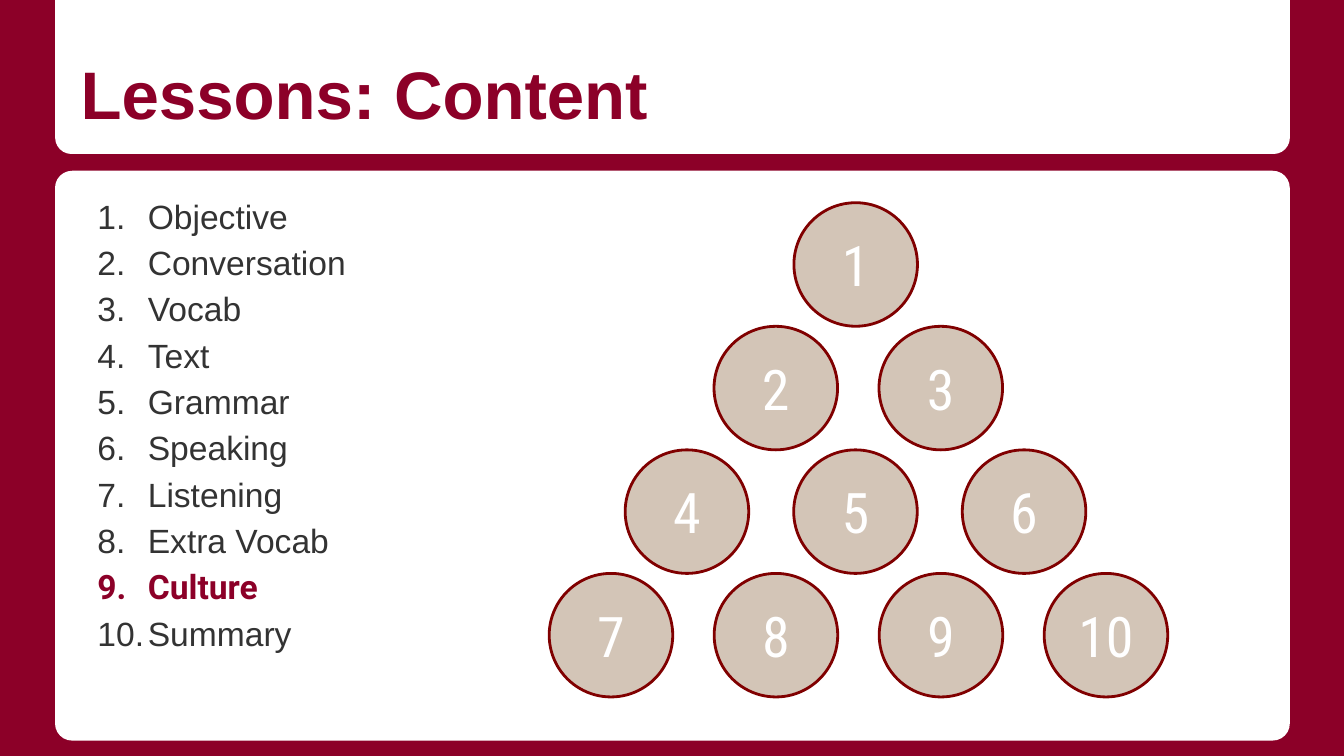
"""Build the "Lessons: Content" slide with a numbered list and a pyramid of circles."""
from dataclasses import dataclass
from itertools import count

from lxml.etree import SubElement
from pptx import Presentation
from pptx.dml.color import RGBColor
from pptx.enum.shapes import MSO_SHAPE
from pptx.enum.text import MSO_ANCHOR, MSO_AUTO_SIZE, PP_ALIGN
from pptx.oxml.ns import qn
from pptx.shapes.autoshape import Shape
from pptx.slide import Slide
from pptx.text.text import TextFrame, _Paragraph
from pptx.util import Pt

CRIMSON = RGBColor(0x8C, 0x00, 0x28)
MAROON = RGBColor(0x80, 0x00, 0x00)
SAND = RGBColor(0xD3, 0xC5, 0xB7)
CHARCOAL = RGBColor(0x33, 0x33, 0x33)
WHITE = RGBColor(0xFF, 0xFF, 0xFF)
INSET = 7.2
DIAMETER = 66.2
PYRAMID_TOP = 108.6


@dataclass(frozen=True)
class Panel:
    kind: MSO_SHAPE
    top: float
    height: float
    radius: float
    rotation: float = 0


@dataclass(frozen=True)
class Row:
    left: float
    pitch: float
    circles: int


@dataclass(frozen=True)
class Item:
    text: str
    font: str = "Arial"
    color: RGBColor = CHARCOAL
    bold: bool = False


PANELS = [
    Panel(MSO_SHAPE.ROUNDED_RECTANGLE, 91.5, 305.3, 0.03),
    Panel(MSO_SHAPE.ROUND_2_SAME_RECTANGLE, 0, 82.5, 0.106, 180),
]
ROWS = [Row(425.3, 0, 1), Row(382.5, 88.4, 2), Row(334.9, 90.3, 3), Row(294.2, 88.4, 4)]
ITEMS = [
    Item("Objective"),
    Item("Conversation"),
    Item("Vocab"),
    Item("Text"),
    Item("Grammar"),
    Item("Speaking"),
    Item("Listening"),
    Item("Extra Vocab"),
    Item("Culture", "Roboto", CRIMSON, True),
    Item("Summary"),
]


def place(sp: Shape, left: float, top: float, width: float, height: float) -> None:
    sp.left, sp.top, sp.width, sp.height = Pt(left), Pt(top), Pt(width), Pt(height)


def set_frame(tf: TextFrame, anchor: MSO_ANCHOR) -> None:
    tf.word_wrap = True
    tf.auto_size = MSO_AUTO_SIZE.NONE
    tf.vertical_anchor = anchor
    tf.margin_left = tf.margin_right = tf.margin_top = tf.margin_bottom = Pt(INSET)


def add_run(p: _Paragraph, text: str, font: str, size: float, color: RGBColor, bold: bool = False) -> None:
    r = p.add_run()
    r.text = text
    r.font.name, r.font.size, r.font.bold = font, Pt(size), bold
    r.font.color.rgb = color


def add_panel(s: Slide, panel: Panel) -> None:
    sp = s.shapes.add_shape(panel.kind, Pt(29.5), Pt(panel.top), Pt(661.5), Pt(panel.height))
    sp.adjustments[0] = panel.radius
    sp.rotation = panel.rotation
    sp.shadow.inherit = False
    sp.fill.solid()
    sp.fill.fore_color.rgb = WHITE
    sp.line.fill.background()
    sp.element.getparent().insert(2, sp.element)


def add_title(s: Slide, text: str) -> None:
    sp = s.shapes.title
    place(sp, 36, 10.8, 648, 67.7)
    set_frame(sp.text_frame, MSO_ANCHOR.BOTTOM)
    p = sp.text_frame.paragraphs[0]
    p.alignment = PP_ALIGN.LEFT
    add_run(p, text, "Arial", 36, CRIMSON, True)


def add_item(p: _Paragraph, item: Item) -> None:
    p.line_spacing = 1.15
    p.space_before = Pt(0)
    pPr = p._p.get_or_add_pPr()
    pPr.set("marL", str(Pt(36)))
    pPr.set("indent", str(-Pt(27)))
    SubElement(SubElement(pPr, qn("a:buClr")), qn("a:srgbClr"), val=str(item.color))
    SubElement(pPr, qn("a:buFont"), typeface=item.font)
    SubElement(pPr, qn("a:buAutoNum"), type="arabicPeriod")
    add_run(p, item.text, item.font, 18, item.color, item.bold)


def add_list(s: Slide, items: list[Item]) -> None:
    sp = s.placeholders[1]
    place(sp, 36, 94.3, 648, 293)
    tf = sp.text_frame
    set_frame(tf, MSO_ANCHOR.TOP)
    for i, item in enumerate(items):
        add_item(tf.add_paragraph() if i else tf.paragraphs[0], item)


def add_circle(s: Slide, left: float, top: float, label: str) -> None:
    sp = s.shapes.add_shape(MSO_SHAPE.OVAL, Pt(left), Pt(top), Pt(DIAMETER), Pt(DIAMETER))
    sp.shadow.inherit = False
    sp.fill.solid()
    sp.fill.fore_color.rgb = SAND
    sp.line.color.rgb = MAROON
    sp.line.width = Pt(1.5)
    set_frame(sp.text_frame, MSO_ANCHOR.MIDDLE)
    p = sp.text_frame.paragraphs[0]
    p.alignment = PP_ALIGN.CENTER
    add_run(p, label, "Roboto Condensed", 30, WHITE)


def main() -> None:
    prs = Presentation()
    prs.slide_width, prs.slide_height = Pt(720), Pt(405)
    s = prs.slides.add_slide(prs.slide_layouts[1])
    s.background.fill.solid()
    s.background.fill.fore_color.rgb = CRIMSON
    for panel in PANELS:
        add_panel(s, panel)
    add_title(s, "Lessons: Content")
    add_list(s, ITEMS)
    numbers = count(1)
    for i, row in enumerate(ROWS):
        for j in range(row.circles):
            add_circle(s, row.left + j * row.pitch, PYRAMID_TOP + i * DIAMETER, str(next(numbers)))
    prs.save("out.pptx")


if __name__ == "__main__":
    main()
